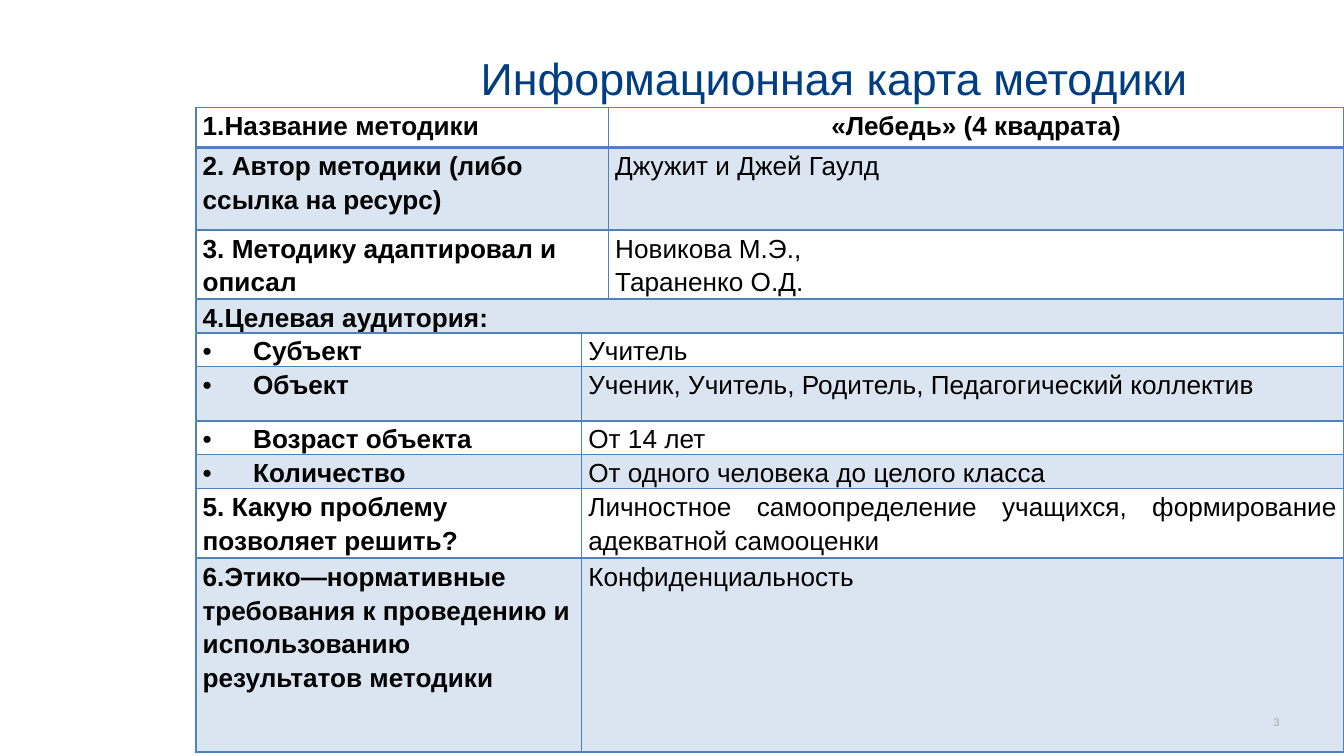
from lxml.etree import SubElement
from pptx import Presentation
from pptx.dml.color import RGBColor
from pptx.enum.text import MSO_ANCHOR as Anchor, PP_ALIGN as Align
from pptx.oxml.ns import qn
from pptx.util import Pt

TITLE = "Информационная карта методики"
PAGE_NUMBER = "3"
ACCENT = "4F81BD"
COLUMN_WIDTHS = (206.6, 14.4, 394)

# height, start column of the answer (None: one cell across), label, answer lines
ROWS = [
    (21.6, 2, "1.Название методики", ["«Лебедь» (4 квадрата)"]),
    (44, 2, "2. Автор методики (либо ссылка на ресурс)", ["Джужит и Джей Гаулд"]),
    (37, 2, "3. Методику адаптировал и описал", ["Новикова М.Э.,", "Тараненко О.Д."]),
    (18, None, "4.Целевая аудитория:", []),
    (18, 1, "Субъект", ["Учитель"]),
    (29, 1, "Объект", ["Ученик, Учитель, Родитель, Педагогический коллектив"]),
    (18, 1, "Возраст объекта", ["От 14 лет"]),
    (18, 1, "Количество", ["От одного человека до целого класса"]),
    (37.4, 1, "5. Какую проблему позволяет решить?",
     ["Личностное самоопределение учащихся, формирование адекватной самооценки"]),
    (103.7, 1, "6.Этико—нормативные требования к проведению и использованию "
     "результатов методики", ["Конфиденциальность"]),
]
BULLETED_ROWS = range(4, 8)
ANSWER_ALIGNMENT = {0: Align.CENTER, 8: Align.JUSTIFY}


def color(hex_value):
    return RGBColor.from_string(hex_value)


def set_all(target, values):
    for name, value in values.items():
        setattr(target, name, value)


def write(frame, lines, size, hex_value, bold=False, alignment=Align.LEFT, spacing=1):
    for index, line in enumerate(lines):
        paragraph = frame.paragraphs[0] if index == 0 else frame.add_paragraph()
        set_all(paragraph, {"alignment": alignment, "line_spacing": spacing})
        run = paragraph.add_run()
        run.text = line
        set_all(run.font, {"name": "Arial", "size": Pt(size), "bold": bold})
        run.font.color.rgb = color(hex_value)


def add_bullet(paragraph):
    properties = paragraph._p.get_or_add_pPr()
    properties.set("marL", str(Pt(27)))
    properties.set("indent", str(Pt(-27)))
    SubElement(properties, qn("a:buFont"), typeface="Arial")
    SubElement(properties, qn("a:buChar"), char="•")
    tabs = SubElement(properties, qn("a:tabLst"))
    SubElement(tabs, qn("a:tab"), pos=str(Pt(36)), algn="l")


def add_borders(cell, widths):
    properties = cell._tc.get_or_add_tcPr()
    for side, width in zip("LRTB", widths):
        line = SubElement(properties, qn(f"a:ln{side}"), w=str(Pt(width)))
        fill = SubElement(line, qn("a:solidFill"))
        SubElement(fill, qn("a:srgbClr"), val=ACCENT)


def fill_cell(cell, shaded):
    if not shaded:
        cell.fill.background()
        return
    cell.fill.solid()
    cell.fill.fore_color.rgb = color(ACCENT)
    tint = cell._tc.tcPr.find(f"{qn('a:solidFill')}/{qn('a:srgbClr')}")
    SubElement(tint, qn("a:alpha"), val="20000")


def add_table(slide):
    heights = [row[0] for row in ROWS]
    table = slide.shapes.add_table(
        len(ROWS), len(COLUMN_WIDTHS), Pt(105), Pt(57.6),
        Pt(sum(COLUMN_WIDTHS)), Pt(sum(heights))).table
    set_all(table, {"first_row": False, "horz_banding": False})
    for column, width in zip(table.columns, COLUMN_WIDTHS):
        column.width = Pt(width)

    for index, (height, start, label, answer) in enumerate(ROWS):
        table.rows[index].height = Pt(height)
        for cell in table.rows[index].cells:
            add_borders(cell, (1, 1, 2 if index == 1 else 1, 2 if index == 0 else 1))
            fill_cell(cell, index % 2 == 1)
            set_all(cell, {"margin_left": Pt(3.6), "margin_right": Pt(3.6),
                           "margin_top": 0, "margin_bottom": 0,
                           "vertical_anchor": Anchor.TOP})
        label_cell = table.cell(index, 0)
        if start != 1:
            label_cell.merge(table.cell(index, 1 if start else 2))
        if index in BULLETED_ROWS:
            add_bullet(label_cell.text_frame.paragraphs[0])
        write(label_cell.text_frame, [label], 14, "000000", True, spacing=1.15)
        if start:
            answer_cell = table.cell(index, start)
            if start == 1:
                answer_cell.merge(table.cell(index, 2))
            write(answer_cell.text_frame, answer, 14, "000000", index == 0,
                  ANSWER_ALIGNMENT.get(index, Align.LEFT), 1.15)


def main():
    presentation = Presentation()
    set_all(presentation, {"slide_width": Pt(720), "slide_height": Pt(405)})
    slide = presentation.slides.add_slide(presentation.slide_layouts[5])

    title = slide.shapes.title
    set_all(title, {"left": Pt(193), "top": Pt(23.8), "width": Pt(507.6), "height": Pt(65.5)})
    set_all(title.text_frame, {"vertical_anchor": Anchor.TOP, "word_wrap": True})
    write(title.text_frame, [TITLE], 24, "003E81", alignment=Align.CENTER)

    add_table(slide)

    number = slide.shapes.add_textbox(Pt(658.8), Pt(378), Pt(33.8), Pt(17.3)).text_frame
    set_all(number, {"vertical_anchor": Anchor.MIDDLE, "word_wrap": True})
    write(number, [PAGE_NUMBER], 6, "A6A6A6", alignment=Align.RIGHT)
    presentation.save("out.pptx")


if __name__ == "__main__":
    main()
